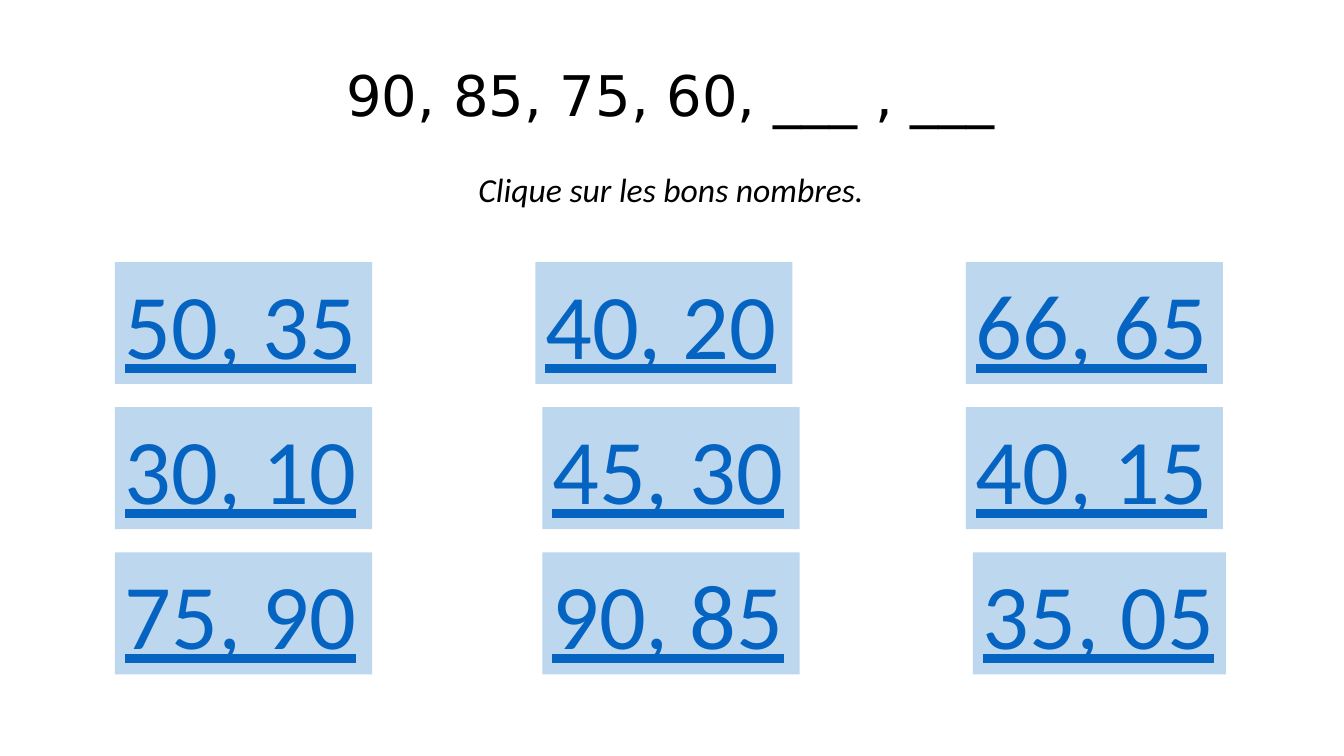
from pptx import Presentation
from pptx import util as u
from pptx.dml.color import RGBColor
from pptx.enum import shapes, text


def color(hex_string):
    return RGBColor.from_string(hex_string)


def write(shape, content, *, size, font="Calibri", fill="000000",
          align=text.PP_ALIGN.LEFT, italic=False, underline=False):
    """Put one formatted line of text at the top of a shape."""
    frame = shape.text_frame
    frame.word_wrap = True
    frame.auto_size = text.MSO_AUTO_SIZE.NONE
    frame.vertical_anchor = text.MSO_ANCHOR.TOP
    paragraph = frame.paragraphs[0]
    paragraph.alignment = align
    paragraph.line_spacing = 1.0
    run = paragraph.add_run()
    run.text = content
    run.font.name = font
    run.font.size = u.Pt(size)
    run.font.italic = italic
    run.font.underline = underline
    run.font.color.rgb = color(fill)


class QuizSlide:
    TILE_FILL = "BDD7EE"
    LINK_COLOR = "0563C1"

    def __init__(self, presentation):
        title_only = presentation.slide_layouts[5]
        self.slide = presentation.slides.add_slide(title_only)

    def title(self, content, left, top, width, height):
        shape = self.slide.shapes.title
        shape.left, shape.top = u.Inches(left), u.Inches(top)
        shape.width, shape.height = u.Inches(width), u.Inches(height)
        write(shape, content, size=40, font="DejaVu Sans",
              align=text.PP_ALIGN.CENTER)

    def instruction(self, content, left, top, width, height):
        box = self.slide.shapes.add_textbox(
            u.Inches(left), u.Inches(top), u.Inches(width), u.Inches(height))
        write(box, content, size=24, italic=True, align=text.PP_ALIGN.CENTER)

    def answer(self, content, left, top, width, height):
        tile = self.slide.shapes.add_shape(
            shapes.MSO_SHAPE.RECTANGLE,
            u.Inches(left), u.Inches(top), u.Inches(width), u.Inches(height))
        tile.shadow.inherit = False
        tile.fill.solid()
        tile.fill.fore_color.rgb = color(self.TILE_FILL)
        tile.line.fill.background()
        write(tile, content, size=66, fill=self.LINK_COLOR, underline=True)


def main():
    presentation = Presentation()
    presentation.slide_width = u.Inches(13.33)
    presentation.slide_height = u.Inches(7.5)

    quiz = QuizSlide(presentation)
    quiz.title("90, 85, 75, 60, ___ , ___", 1.14, 0.55, 11.02, 0.77)
    quiz.instruction("Clique sur les bons nombres.", 3.13, 1.63, 7.05, 0.5)

    # Each column: the left edges of its three tiles, then their answers
    columns = [
        ((1.14, 1.14, 1.14), ("50, 35", "30, 10", "75, 90")),
        ((5.31, 5.38, 5.38), ("40, 20", "45, 30", "90, 85")),
        ((9.58, 9.58, 9.65), ("66, 65", "40, 15", "35, 05")),
    ]
    first_top, row_step = 2.6, 1.44
    for lefts, answers in columns:
        for row, (left, content) in enumerate(zip(lefts, answers)):
            width = 2.51 if content == "35, 05" else 2.55
            quiz.answer(content, left, first_top + row * row_step, width, 1.21)

    presentation.save("out.pptx")


if __name__ == "__main__":
    main()
